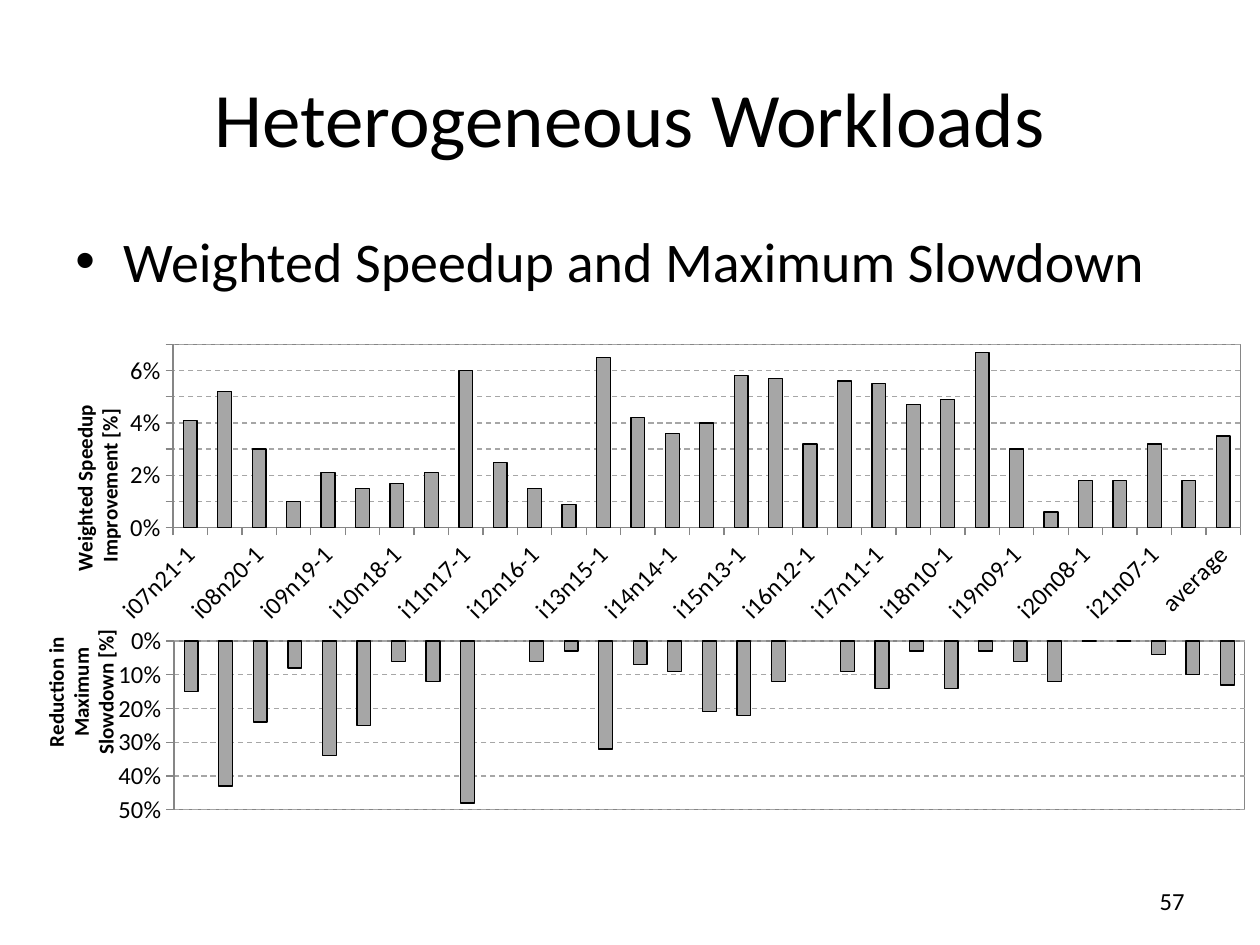
"""Build the Heterogeneous Workloads slide with its two column charts."""
from lxml import etree
from pptx import Presentation
from pptx import util as u
from pptx.chart.data import CategoryChartData
from pptx.dml.color import RGBColor
from pptx.enum import chart as ch, dml, text
from pptx.oxml.ns import qn

BLACK = RGBColor(0, 0, 0)
GREY = RGBColor(0xA6, 0xA6, 0xA6)
AXIS = RGBColor(0x86, 0x86, 0x86)
FONT = "Calibri"
COUNT = 31


def box(*lengths):
    return [u.Emu(round(v * 914400 / 126)) for v in lengths]


def set_layout(parent, index, **values):
    for old in parent.findall(qn("c:layout")):
        parent.remove(old)
    layout = etree.Element(qn("c:layout"))
    parent.insert(index, layout)
    manual = etree.SubElement(layout, qn("c:manualLayout"))
    for name, value in values.items():
        etree.SubElement(manual, qn("c:" + name)).set("val", str(value))


prs = Presentation()
prs.slide_width, prs.slide_height = box(1260, 945)
s = prs.slides.add_slide(prs.slide_layouts[5])

title = s.shapes.title
title.left, title.top, title.width, title.height = box(0, 38, 1260, 157)
body = s.shapes.add_textbox(*box(63, 220, 1134, 624))
number = s.shapes.add_textbox(*box(903, 876, 294, 50))

texts = [
    (title, "Heterogeneous Workloads", 44, text.PP_ALIGN.CENTER, text.MSO_ANCHOR.MIDDLE),
    (body, "Weighted Speedup and Maximum Slowdown", 32, text.PP_ALIGN.LEFT, text.MSO_ANCHOR.TOP),
    (number, "57", 14, text.PP_ALIGN.RIGHT, text.MSO_ANCHOR.MIDDLE),
]
for sp, words, size, align, anchor in texts:
    tf = sp.text_frame
    tf.word_wrap = True
    tf.auto_size = text.MSO_AUTO_SIZE.NONE
    tf.vertical_anchor = anchor
    p = tf.paragraphs[0]
    p.alignment = align
    r = p.add_run()
    r.text = words
    r.font.size = u.Pt(size)
    r.font.name = FONT
    r.font.color.rgb = BLACK

p = body.text_frame.paragraphs[0]
p.space_before = u.Pt(6)
pPr = p._p.get_or_add_pPr()
pPr.set("marL", str(u.Inches(0.38)))
pPr.set("indent", str(-u.Inches(0.38)))
etree.SubElement(pPr, qn("a:buFont")).set("typeface", "Arial")
etree.SubElement(pPr, qn("a:buChar")).set("char", "•")

workloads = [f"i{k:02}n{28 - k:02}-{n}" for k in range(7, 22) for n in (1, 2)]
speedup = [0.041, 0.052, 0.03, 0.01, 0.021, 0.015, 0.017, 0.021, 0.06, 0.025, 0.015,
           0.009, 0.065, 0.042, 0.036, 0.04, 0.058, 0.057, 0.032, 0.056, 0.055,
           0.047, 0.049, 0.067, 0.03, 0.006, 0.018, 0.018, 0.032, 0.018, 0.035]
slowdown = [0.15, 0.43, 0.24, 0.08, 0.34, 0.25, 0.06, 0.12, 0.48, -0.03, 0.06,
            0.03, 0.32, 0.07, 0.09, 0.21, 0.22, 0.12, -0.06, 0.09, 0.14,
            0.03, 0.14, 0.03, 0.06, 0.12, 0, 0, 0.04, 0.1, 0.13]
charts = [
    dict(at=(0, 532, 1260, 496), cats=[str(i + 1) for i in range(COUNT)], vals=slowdown,
         lines=["Reduction in ", "Maximum ", "Slowdown [%] "], title_at=(0.03, 0.18),
         top=0.5, step=0.1, plot=(0.138, 0.22, 0.85, 0.34), flipped=True),
    dict(at=(-37, 155, 1297, 483), cats=workloads + ["average"], vals=speedup,
         lines=["Weighted Speedup ", "Improvement [%]"], title_at=(0.08, 0.5),
         top=0.07, step=0.01, plot=(0.162, 0.392, 0.823, 0.38), flipped=False),
]
for c in charts:
    data = CategoryChartData(number_format="0%")
    data.categories = c["cats"]
    data.add_series("Series 1", c["vals"])
    chart = s.shapes.add_chart(ch.XL_CHART_TYPE.COLUMN_CLUSTERED, *box(*c["at"]), data).chart
    chart.has_legend = False
    chart.has_title = False
    chart.font.size = u.Pt(10)
    chart.font.name = FONT
    chart.font.color.rgb = BLACK

    plot = chart.plots[0]
    plot.gap_width = 150
    plot.vary_by_categories = False
    bars = plot.series[0]
    bars.invert_if_negative = False
    bars.format.fill.solid()
    bars.format.fill.fore_color.rgb = GREY
    bars.format.line.color.rgb = BLACK
    bars.format.line.width = u.Pt(0.75)

    val, cat = chart.value_axis, chart.category_axis
    for axis in (val, cat):
        axis.major_tick_mark = ch.XL_TICK_MARK.OUTSIDE
        axis.tick_labels.font.size = u.Pt(14)
        axis.format.line.color.rgb = AXIS
    val.minimum_scale, val.maximum_scale, val.major_unit = 0, c["top"], c["step"]
    val.reverse_order = c["flipped"]
    val.tick_labels.number_format = "0%"
    val.tick_labels.number_format_is_linked = False
    grid = val.major_gridlines.format.line
    grid.color.rgb = GREY
    grid.width = u.Pt(0.75)
    grid.dash_style = dml.MSO_LINE.DASH

    tf = val.axis_title.text_frame
    for i, line in enumerate(c["lines"]):
        p = tf.add_paragraph() if i else tf.paragraphs[0]
        r = p.add_run()
        r.text = line
        r.font.size = u.Pt(12)
        r.font.bold = True
        r.font.name = FONT
        r.font.color.rgb = BLACK
    tf._txBody.bodyPr.set("rot", "-5400000")
    tf._txBody.bodyPr.set("vert", "horz")
    x, y = c["title_at"]
    set_layout(val.axis_title._element, 1, xMode="edge", yMode="edge", x=x, y=y)

    if c["flipped"]:
        cat.visible = False
    else:
        cat._element.txPr.bodyPr.set("rot", "-2700000")
        skip = etree.Element(qn("c:tickLblSkip"))
        skip.set("val", "2")
        cat._element.find(qn("c:noMultiLvlLbl")).addprevious(skip)

    area = cat._element.getparent()
    x, y, w, h = c["plot"]
    set_layout(area, 0, layoutTarget="inner", xMode="edge", yMode="edge", x=x, y=y, w=w, h=h)
    border = etree.SubElement(etree.SubElement(area, qn("c:spPr")), qn("a:ln"))
    border.set("w", str(u.Pt(0.75)))
    fill = etree.SubElement(border, qn("a:solidFill"))
    etree.SubElement(fill, qn("a:srgbClr")).set("val", str(AXIS))

prs.save("out.pptx")
